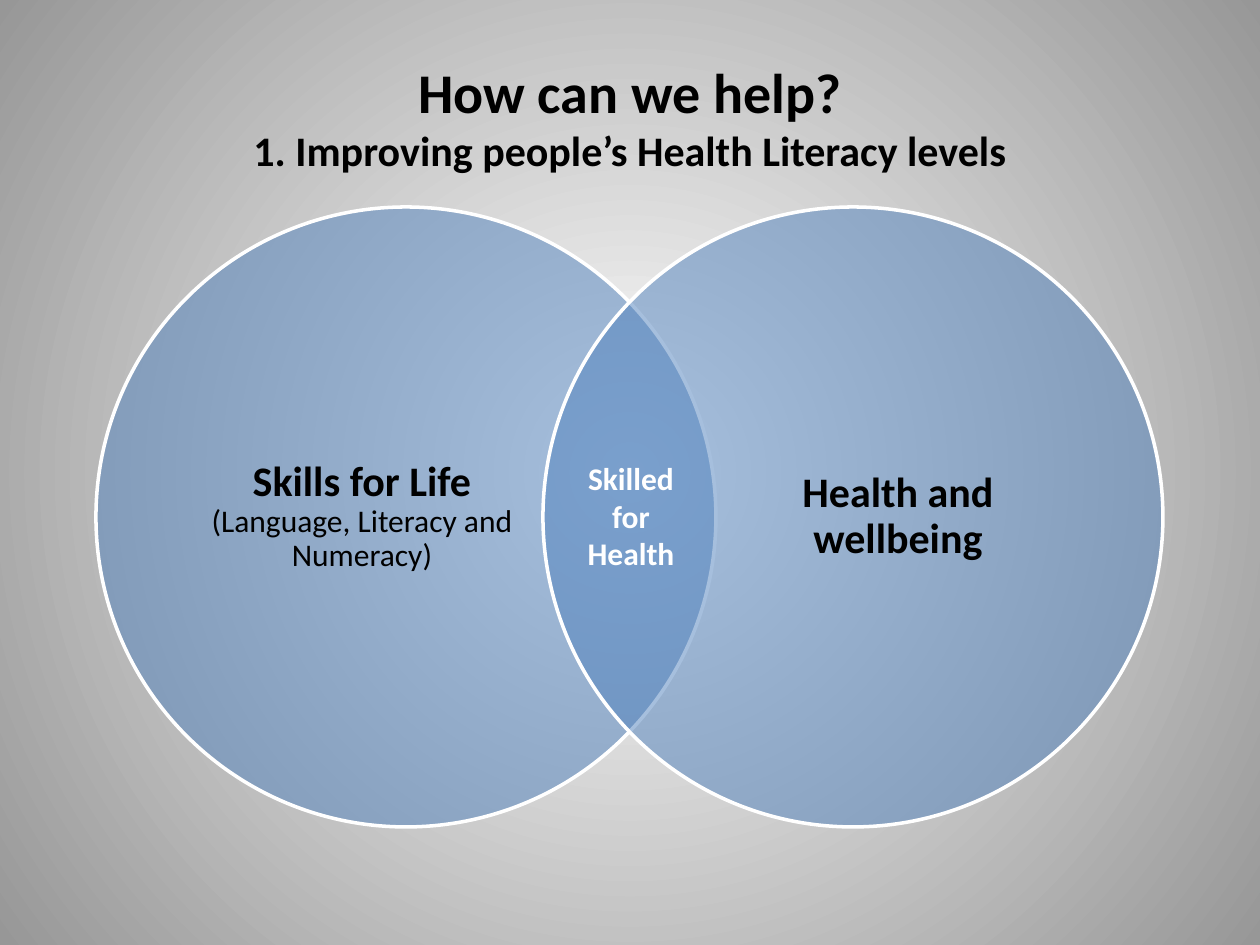
from copy import deepcopy

from lxml import etree
from pptx import Presentation
from pptx.dml.color import RGBColor
from pptx.enum.shapes import MSO_SHAPE
from pptx.enum.text import MSO_ANCHOR, MSO_AUTO_SIZE, PP_ALIGN
from pptx.oxml.ns import qn
from pptx.util import Emu, Pt

OVAL = MSO_SHAPE.OVAL
MIDDLE = MSO_ANCHOR.MIDDLE
CENTER = PP_ALIGN.CENTER
FIT_SHAPE = MSO_AUTO_SIZE.SHAPE_TO_FIT_TEXT

EMU_PER_PX = 914400 / 126
FONT = "Calibri"
COLOURS = {
    "text": "000000",
    "light": "FFFFFF",
    "edge": "979797",
    "circle": "4F81BD",
}

CIRCLE_TOP, CIRCLE_SIZE = 207, 620
LABEL_TOP, LABEL_WIDTH, LABEL_HEIGHT = 280, 358, 474


def px(length):
    return Emu(round(length * EMU_PER_PX))


def colour(name):
    return RGBColor.from_string(COLOURS[name])


class VennSlide:
    """Holds the slide in hand and the style of its elements."""

    def __init__(self, deck):
        self.page = deck.slides.add_slide(deck.slide_layouts[5])

    def background(self):
        """Radial gradient from a light centre to darker corners."""
        fill = self.page.background.fill
        fill.gradient()
        for stop, name in zip(fill.gradient_stops, ("light", "edge")):
            stop.color.rgb = colour(name)
        gradient = self.page.element.find(".//" + qn("a:gradFill"))
        gradient.remove(gradient.find(qn("a:lin")))
        radial = etree.SubElement(gradient, qn("a:path"), {"path": "circle"})
        centre = dict.fromkeys("ltrb", "50000")
        etree.SubElement(radial, qn("a:fillToRect"), centre)

    def format_text(self, box, text, styles, ink="text", spacing=None):
        """Fill a box; styles gives (size, bold) for each line of a paragraph."""
        frame = box.text_frame
        frame.text = text
        frame.vertical_anchor = MIDDLE
        for para in frame.paragraphs:
            para.alignment = CENTER
            para.line_spacing = spacing
            for span, (size, bold) in zip(para.runs, styles):
                span.font.name = FONT
                span.font.size = Pt(size)
                span.font.bold = bold
                span.font.color.rgb = colour(ink)
        # A line break takes the style of the text before it
        for line_break in box.element.iter(qn("a:br")):
            previous = line_break.getprevious()
            line_break.append(deepcopy(previous.find(qn("a:rPr"))))

    def title(self, left, top, width, height, text, styles):
        box = self.page.shapes.title
        box.left, box.top, box.width, box.height = map(px, (left, top, width, height))
        self.format_text(box, text, styles)

    def circle(self, left):
        shape = self.page.shapes.add_shape(
            OVAL, px(left), px(CIRCLE_TOP), px(CIRCLE_SIZE), px(CIRCLE_SIZE))
        shape.shadow.inherit = False
        shape.fill.solid()
        shape.fill.fore_color.rgb = colour("circle")
        solid = shape.element.spPr.find(qn("a:solidFill"))
        etree.SubElement(solid[0], qn("a:alpha"), {"val": "50000"})
        shape.line.color.rgb = colour("light")
        shape.line.width = Pt(2)

    def circle_label(self, left, text, styles):
        box = self.page.shapes.add_textbox(
            px(left), px(LABEL_TOP), px(LABEL_WIDTH), px(LABEL_HEIGHT))
        frame = box.text_frame
        frame.word_wrap = True
        frame.margin_left = frame.margin_right = 0
        frame.margin_top = frame.margin_bottom = 0
        self.format_text(box, text, styles, spacing=0.9)

    def overlap_label(self, left, top, width, height, text, styles):
        box = self.page.shapes.add_textbox(*map(px, (left, top, width, height)))
        box.text_frame.word_wrap = False
        box.text_frame.auto_size = FIT_SHAPE
        self.format_text(box, text, styles, ink="light")


def main():
    deck = Presentation()
    deck.slide_width, deck.slide_height = px(1260), px(945)

    venn = VennSlide(deck)
    venn.background()
    venn.title(63, 38, 1134, 157,
               "How can we help?\v1. Improving people’s Health Literacy levels",
               [(32, True), (24, True)])
    circles = [
        (96, 183, "Skills for Life\v(Language, Literacy and Numeracy)",
         [(24, True), (18, False)]),
        (543, 719, "Health and wellbeing", [(24, True)]),
    ]
    for circle_left, label_left, text, styles in circles:
        venn.circle(circle_left)
        venn.circle_label(label_left, text, styles)
    venn.overlap_label(571, 452, 120, 127, "Skilled\nfor\nHealth", [(18, True)])

    deck.save("out.pptx")


if __name__ == "__main__":
    main()
